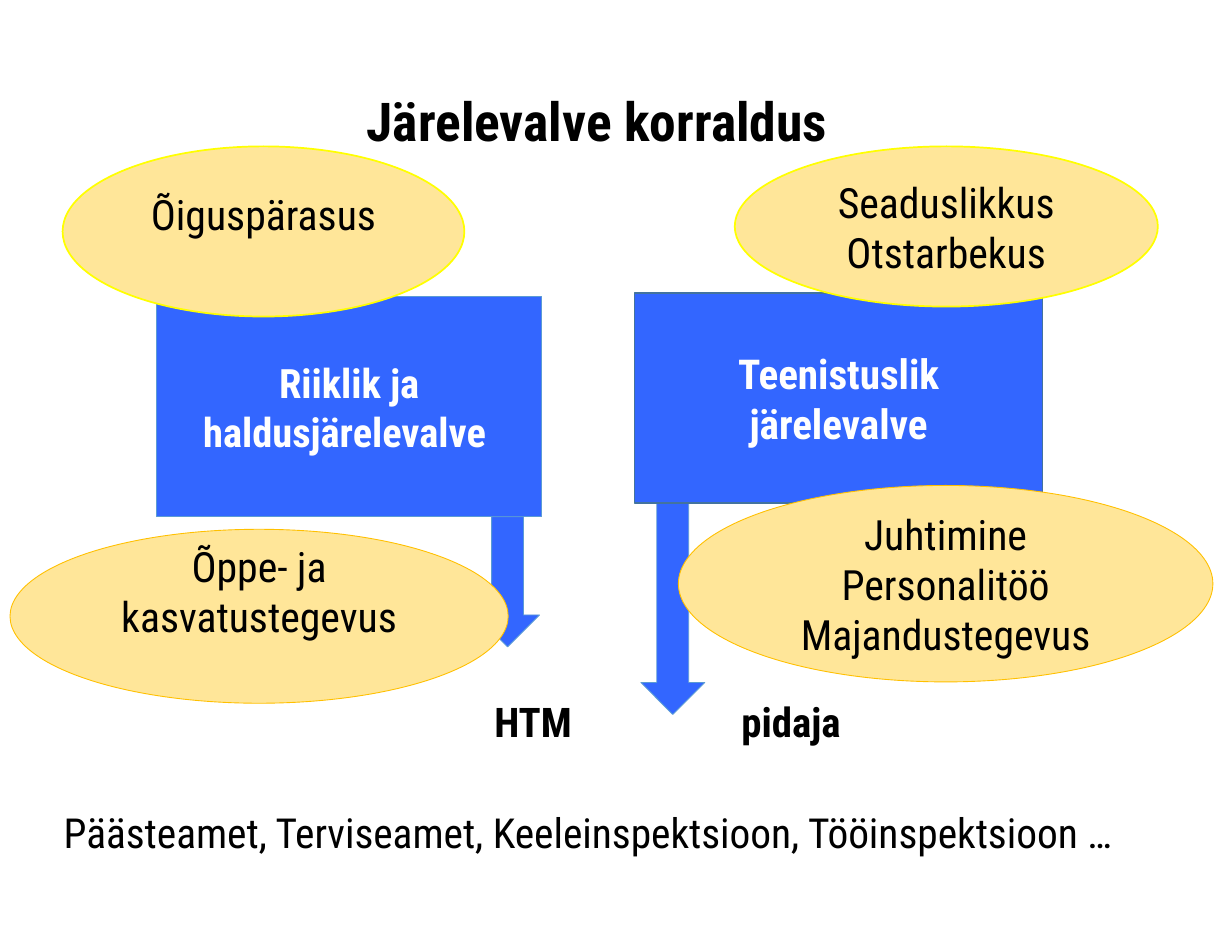
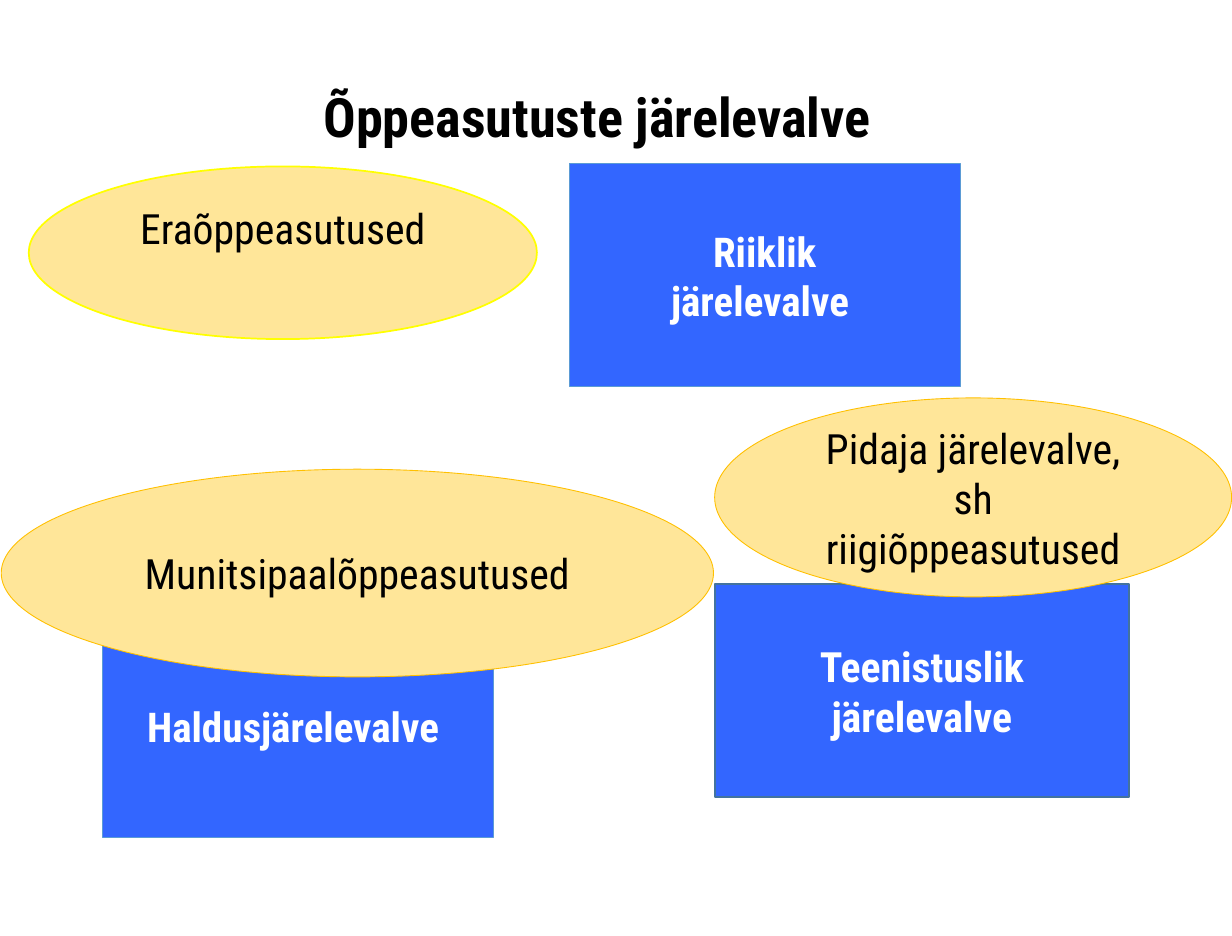
from pptx import Presentation
from pptx.dml.color import RGBColor
from pptx.enum.shapes import MSO_SHAPE as Kind
from pptx.enum.text import MSO_ANCHOR as Anchor, PP_ALIGN as Align
from pptx.util import Cm, Inches, Pt

FONT = "Roboto Condensed"
BLACK = RGBColor(0, 0, 0)
WHITE = RGBColor(255, 255, 255)
BLUE = RGBColor(0x33, 0x66, 0xFF)
SKY = RGBColor(0x5B, 0x9B, 0xD5)
STEEL = RGBColor(0x43, 0x73, 0x9E)
CREAM = RGBColor(0xFF, 0xE6, 0x99)
YELLOW = RGBColor(255, 255, 0)
GOLD = RGBColor(0xFF, 0xC0, 0)

# style: preset, fill, line colour, line width, text colour, bold
STYLES = {
    "box": (Kind.RECTANGLE, BLUE, SKY, 0.5, WHITE, True),
    "duty": (Kind.RECTANGLE, BLUE, STEEL, 1, WHITE, True),
    "arrow": (Kind.DOWN_ARROW, BLUE, SKY, 0.5, WHITE, True),
    "aim": (Kind.OVAL, CREAM, YELLOW, 1, BLACK, False),
    "field": (Kind.OVAL, CREAM, GOLD, 0.5, BLACK, False),
}

# shape: style, (left, top, width, height), lines, text size, lift of the text
SLIDES = [
    {
        "title": ("Järelevalve korraldus", 30.8, (0.29, 0.63, 8.96, 0.73)),
        "shapes": [
            ("box", (1.25, 2.37, 3.08, 1.76),
             ["Riiklik ja", "haldusjärelevalve "], 23.3, 0),
            ("arrow", (3.8, 4.13, 0.51, 1.04), [], 24, 0),
            ("arrow", (5.12, 3.98, 0.51, 1.73), [], 24, 0),
            ("duty", (5.07, 2.34, 3.26, 1.68),
             ["Teenistuslik järelevalve"], 23.7, 0),
            ("aim", (0.5, 1.17, 3.21, 1.36), ["Õiguspärasus"], 24, 0.28),
            ("aim", (5.87, 1.17, 3.38, 1.28),
             ["Seaduslikkus", "Otstarbekus"], 24, 0),
            ("field", (0.08, 4.23, 3.98, 1.39),
             ["Õppe- ja kasvatustegevus"], 24, 0.4),
            ("field", (5.42, 3.88, 4.27, 1.57),
             ["Juhtimine", "Personalitöö", "Majandustegevus"], 24, 0),
        ],
        "labels": [
            ("HTM", (3.76, 5.54, 1, 0.5), 23.5, True, Align.CENTER),
            ("pidaja", (5.72, 5.54, 1.2, 0.5), 23.5, True, Align.CENTER),
            ("Päästeamet, Terviseamet, Keeleinspektsioon, Tööinspektsioon …",
             (0.41, 6.42, 9, 0.5), 23.8, False, Align.LEFT),
        ],
    },
    {
        "title": ("Õppeasutuste järelevalve", 31.2, (0.23, 0.59, 9.08, 0.74)),
        "shapes": [
            ("box", (0.82, 4.91, 3.12, 1.78), ["Haldusjärelevalve "], 23.6, 0),
            ("duty", (5.71, 4.67, 3.31, 1.7),
             ["Teenistuslik järelevalve"], 24, 0),
            ("aim", (0.23, 1.33, 4.06, 1.38), ["Eraõppeasutused"], 24, 0.4),
            ("field", (0.01, 3.75, 5.69, 1.66),
             ["Munitsipaalõppeasutused"], 24, 0),
            ("field", (5.71, 3.18, 4.13, 1.59),
             ["Pidaja järelevalve, sh riigiõppeasutused"], 24, 0),
            ("box", (4.55, 1.31, 3.12, 1.78),
             ["Riiklik", "järelevalve "], 23.6, 0),
        ],
        "labels": [],
    },
]


def write(frame, lines, size, color, bold, align=Align.CENTER, space=1):
    frame.word_wrap = True
    frame.vertical_anchor = Anchor.MIDDLE
    for i, line in enumerate(lines):
        para = frame.add_paragraph() if i else frame.paragraphs[0]
        para.alignment = align
        para.line_spacing = space
        run = para.add_run()
        run.text = line
        font = run.font
        font.name, font.size, font.bold = FONT, Pt(size), bold
        font.color.rgb = color


def add_title(slide, text, size, place):
    title = slide.shapes.title
    title.left, title.top, title.width, title.height = map(Inches, place)
    write(title.text_frame, [text], size, BLACK, True, space=0.9)


def add_item(slide, style, place, lines, size, lift):
    kind, fill, edge, width, color, bold = STYLES[style]
    shape = slide.shapes.add_shape(kind, *map(Inches, place))
    shape.shadow.inherit = False
    shape.fill.solid()
    shape.fill.fore_color.rgb = fill
    shape.line.color.rgb = edge
    shape.line.width = Pt(width)
    shape.text_frame.margin_bottom = Inches(0.05 + lift)
    write(shape.text_frame, lines, size, color, bold)


def add_label(slide, text, place, size, bold, align):
    box = slide.shapes.add_textbox(*map(Inches, place))
    write(box.text_frame, [text], size, BLACK, bold, align, 0.9)


def main():
    deck = Presentation()
    deck.slide_width, deck.slide_height = Cm(25), Cm(19)
    for page in SLIDES:
        slide = deck.slides.add_slide(deck.slide_layouts[5])
        add_title(slide, *page["title"])
        for item in page["shapes"]:
            add_item(slide, *item)
        for label in page["labels"]:
            add_label(slide, *label)
    deck.save("out.pptx")


if __name__ == "__main__":
    main()
